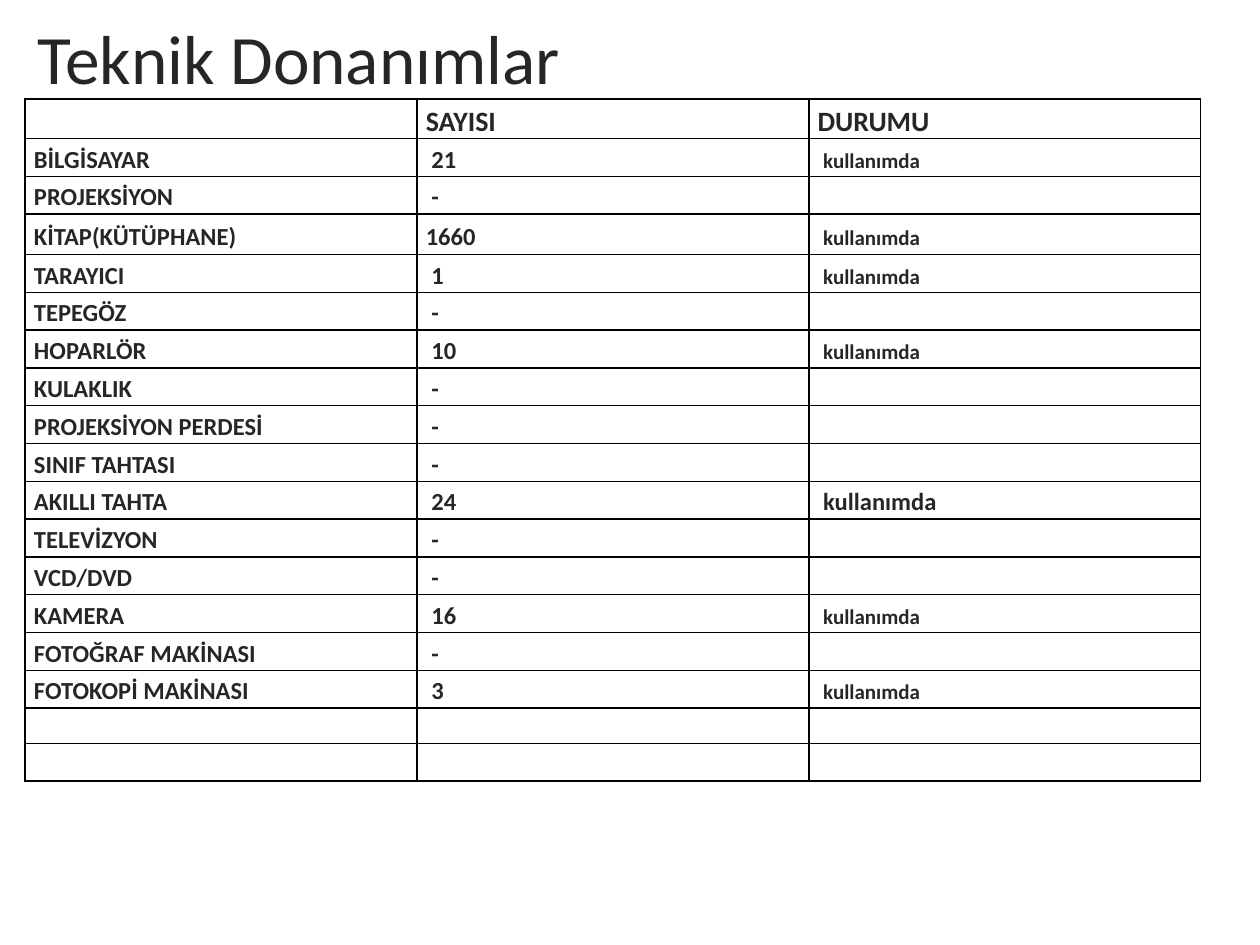
import pptx
import pptx.util
import pptx.dml.color
import pptx.enum.text
import pptx.oxml.ns
from lxml import etree

COLORS = {"text": "262626", "border": "000000", "background": "FFFFFF"}
FONT = "Calibri"
NBSP = chr(160)  # leading hard space of most values
IN_USE = "kullanımda"

HEADER = ("", "SAYISI", "DURUMU")
# Name, count, size of the status text (None when there is no status)
EQUIPMENT = [
    ("BİLGİSAYAR", NBSP + "21", 12),
    ("PROJEKSİYON", NBSP + "-", None),
    ("KİTAP(KÜTÜPHANE)", "1660", 12),
    ("TARAYICI", NBSP + "1", 12),
    ("TEPEGÖZ", NBSP + "-", None),
    ("HOPARLÖR", NBSP + "10", 12),
    ("KULAKLIK", NBSP + "-", None),
    ("PROJEKSİYON PERDESİ", NBSP + "-", None),
    ("SINIF TAHTASI", NBSP + "-", None),
    ("AKILLI TAHTA", NBSP + "24", 14),
    ("TELEVİZYON", NBSP + "-", None),
    ("VCD/DVD", NBSP + "-", None),
    ("KAMERA", NBSP + "16", 12),
    ("FOTOĞRAF MAKİNASI", NBSP + "-", None),
    ("FOTOKOPİ MAKİNASI", NBSP + "3", 12),
]
SPARE_ROWS = 2
ROW_HEIGHT = 0.04  # share of the slide height
ROW_HEIGHT_EXCEPTIONS = {3: 0.0427, 16: 0.0373}


class SlideBuilder:
    """Holds the deck, the current page and the shared style."""

    def __init__(self, width, height):
        self.deck = pptx.Presentation()
        self.deck.slide_width = pptx.util.Inches(width)
        self.deck.slide_height = pptx.util.Inches(height)
        self.page = self.deck.slides.add_slide(self.deck.slide_layouts[6])
        fill = self.page.background.fill
        fill.solid()
        fill.fore_color.rgb = self.color("background")

    def color(self, name):
        return pptx.dml.color.RGBColor.from_string(COLORS[name])

    def across(self, share):
        return round(self.deck.slide_width * share)

    def down(self, share):
        return round(self.deck.slide_height * share)

    def style(self, paragraph, size, bold=False):
        font = paragraph.font
        font.name, font.size, font.bold = FONT, pptx.util.Pt(size), bold
        font.color.rgb = self.color("text")

    def title(self, text, left, top, width, height, size):
        box = self.page.shapes.add_textbox(
            self.across(left), self.down(top), self.across(width), self.down(height))
        frame = box.text_frame
        frame.word_wrap = True
        frame.vertical_anchor = pptx.enum.text.MSO_ANCHOR.MIDDLE
        paragraph = frame.paragraphs[0]
        paragraph.text = text
        self.style(paragraph, size)

    def table(self, rows, left, top, width):
        heights = [self.down(ROW_HEIGHT_EXCEPTIONS.get(index, ROW_HEIGHT))
                   for index in range(len(rows))]
        table = self.page.shapes.add_table(
            len(rows), len(rows[0]), self.across(left), self.down(top),
            self.across(width), sum(heights)).table
        table.first_row = table.horz_banding = False
        for row_index, (values, height) in enumerate(zip(rows, heights)):
            table.rows[row_index].height = height
            for column, spans in enumerate(values):
                self.cell(table.cell(row_index, column), spans, row_index == 0)

    def cell(self, cell, spans, is_header):
        """Fill a cell with (text, size) spans, frame it and clear its fill."""
        cell.margin_left = cell.margin_right = pptx.util.Inches(0.07)
        cell.margin_top = cell.margin_bottom = 0
        anchor = pptx.enum.text.MSO_ANCHOR
        cell.vertical_anchor = anchor.TOP if is_header else anchor.MIDDLE
        paragraph = cell.text_frame.paragraphs[0]
        paragraph.line_spacing = 1.15
        self.style(paragraph, 16 if is_header else 14, bold=True)
        for text, size in spans:
            span = paragraph.add_run()
            span.text = text
            span.font.size = pptx.util.Pt(size)
        self.borders(cell)
        cell.fill.background()

    def borders(self, cell):
        qn = pptx.oxml.ns.qn
        properties = cell._tc.get_or_add_tcPr()
        for side in ("lnL", "lnR", "lnT", "lnB"):
            line = etree.SubElement(properties, qn("a:" + side), w=str(pptx.util.Pt(1)))
            fill = etree.SubElement(line, qn("a:solidFill"))
            etree.SubElement(fill, qn("a:srgbClr"), val=COLORS["border"])


def equipment_rows():
    rows = [[[(text, 16)] if text else [] for text in HEADER]]
    for name, count, status_size in EQUIPMENT:
        status = [(NBSP, 14), (IN_USE, status_size)] if status_size else []
        rows.append([[(name, 14)], [(count, 14)], status])
    return rows + [[[] for _ in HEADER] for _ in range(SPARE_ROWS)]


def main():
    builder = SlideBuilder(10, 7.5)
    # Equipment table
    builder.table(equipment_rows(), left=0.02, top=0.105, width=0.933)
    # Heading
    builder.title("Teknik Donanımlar", left=0.02, top=0.01, width=0.947, height=0.1, size=39.6)
    builder.deck.save("out.pptx")


if __name__ == "__main__":
    main()
